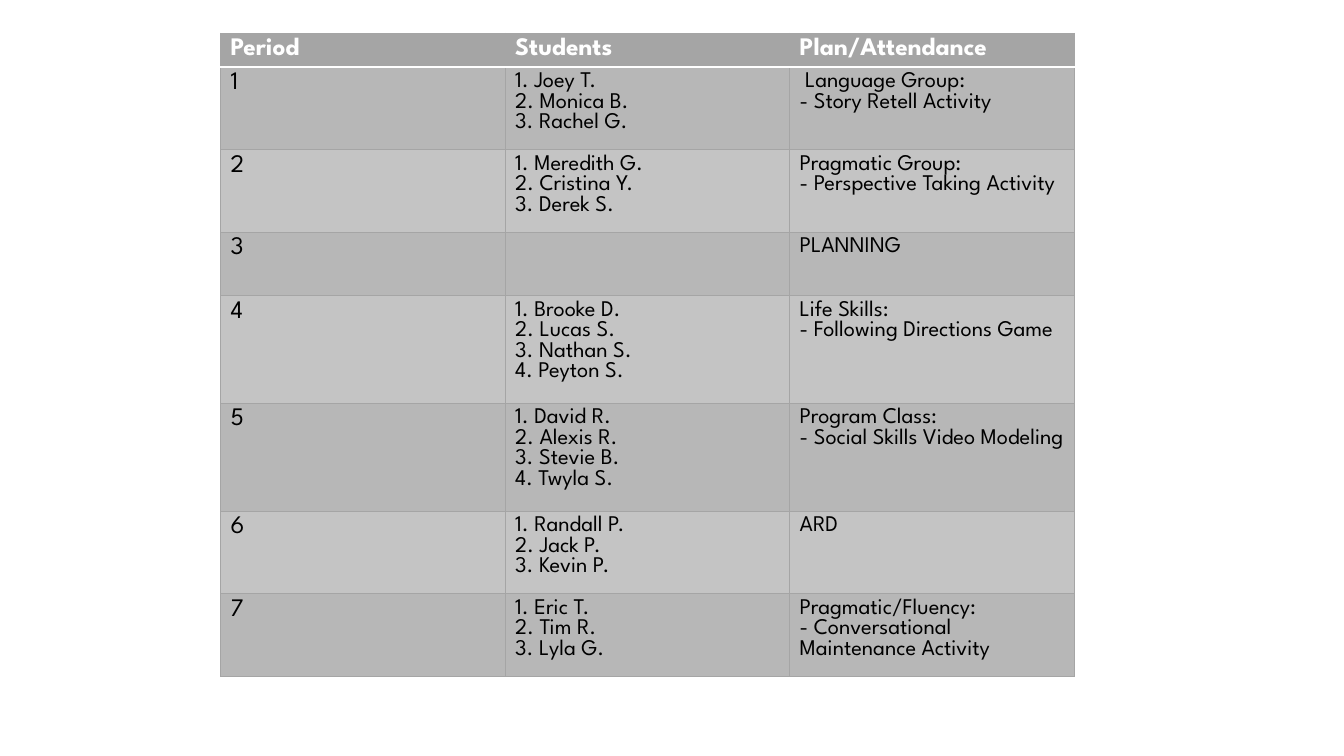
from lxml.etree import SubElement
from pptx import Presentation
from pptx.dml.color import RGBColor as RGB
from pptx.oxml.ns import qn
from pptx.util import Pt

FONT = "League Spartan"
COLORS = {"header": "A5A5A5", "odd": "B7B7B7", "even": "C4C4C4",
          "grid": "A5A5A5", "white": "FFFFFF", "text": "000000"}

HEADINGS = ["Period", "Students", "Plan/Attendance"]
# Row height, students, plan lines
PERIODS = [
    (59, ["Joey T.", "Monica B.", "Rachel G."],
     [" Language Group:", "- Story Retell Activity"]),
    (59, ["Meredith G.", "Cristina Y.", "Derek S."],
     ["Pragmatic Group:", "- Perspective Taking Activity"]),
    (45.3, [], ["PLANNING"]),
    (77, ["Brooke D.", "Lucas S.", "Nathan S.", "Peyton S."],
     ["Life Skills:", "- Following Directions Game"]),
    (77, ["David R.", "Alexis R.", "Stevie B.", "Twyla S."],
     ["Program Class:", "- Social Skills Video Modeling"]),
    (59, ["Randall P.", "Jack P.", "Kevin P."], ["ARD"]),
    (59, ["Eric T.", "Tim R.", "Lyla G."],
     ["Pragmatic/Fluency:", "- Conversational Maintenance Activity"]),
]
HEADER_HEIGHT = 24
HEADER_FORMAT = {"name": FONT, "size": Pt(18), "bold": True}
PERIOD_FORMAT = {"name": FONT, "size": Pt(18), "bold": False}
DETAIL_FORMAT = {"name": FONT, "size": Pt(16), "bold": False}


def set_borders(cell, edges):
    """Draw cell edges given as {side: (colour, width)}; call before filling."""
    tcPr = cell._tc.get_or_add_tcPr()
    for side, (color, width) in edges.items():
        ln = SubElement(tcPr, qn(f"a:ln{side}"), w=str(Pt(width)))
        fill = SubElement(ln, qn("a:solidFill"))
        SubElement(fill, qn("a:srgbClr"), val=COLORS[color])


def fill_cell(cell, lines, fill, color, fmt, edges):
    set_borders(cell, edges)
    cell.fill.solid()
    cell.fill.fore_color.rgb = RGB.from_string(COLORS[fill])
    tf = cell.text_frame
    for i, line in enumerate(lines):
        p = tf.add_paragraph() if i else tf.paragraphs[0]
        r = p.add_run()
        r.text = line
        for name, value in fmt.items():
            setattr(r.font, name, value)
        r.font.color.rgb = RGB.from_string(COLORS[color])


def add_schedule(slide, left, top, width):
    heights = [HEADER_HEIGHT] + [period[0] for period in PERIODS]
    frame = slide.shapes.add_table(len(heights), len(HEADINGS), Pt(left),
                                   Pt(top), Pt(width), Pt(sum(heights)))
    table = frame.table
    for col in table.columns:
        col.width = Pt(width / len(HEADINGS))
    for row, height in zip(table.rows, heights):
        row.height = Pt(height)

    grid, rule = ("grid", 0.75), ("white", 1.25)
    # Header row
    for c, heading in enumerate(HEADINGS):
        fill_cell(table.cell(0, c), [heading], "header", "white", HEADER_FORMAT,
                  {"L": grid, "R": grid, "T": grid, "B": rule})

    # One row per period
    for n, (_, students, plan) in enumerate(PERIODS, 1):
        numbered = [f"{i}. {name}" for i, name in enumerate(students, 1)]
        edges = {"L": grid, "R": grid, "T": rule if n == 1 else grid, "B": grid}
        for c, lines in enumerate([[str(n)], numbered, plan]):
            fill_cell(table.cell(n, c), lines, "odd" if n % 2 else "even", "text",
                      DETAIL_FORMAT if c else PERIOD_FORMAT, edges)


def main():
    prs = Presentation()
    prs.slide_width, prs.slide_height = Pt(960), Pt(540)
    slide = prs.slides.add_slide(prs.slide_layouts[6])
    add_schedule(slide, left=157.5, top=23.75, width=609.9)
    prs.save("out.pptx")


if __name__ == "__main__":
    main()
